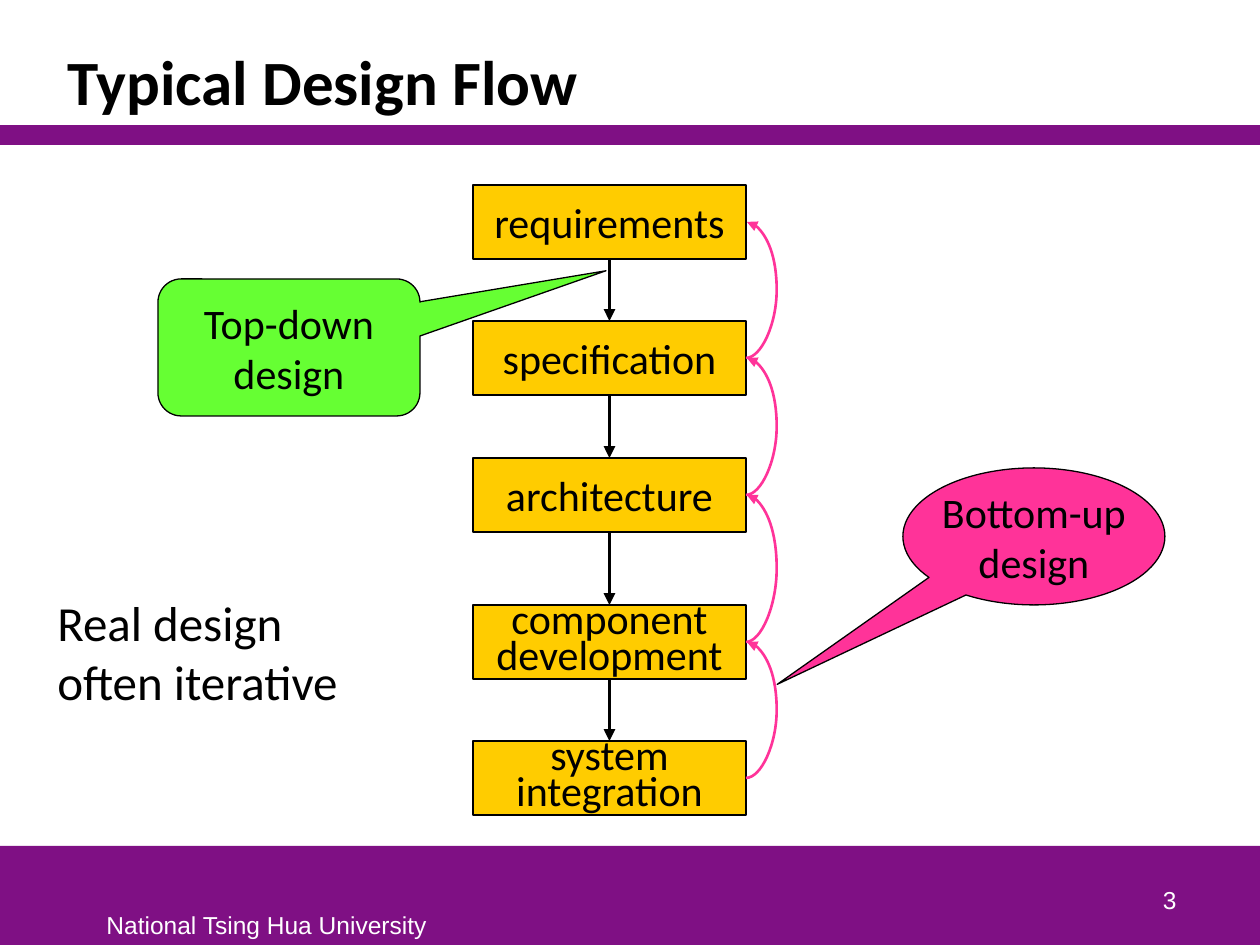
from itertools import pairwise

from lxml.etree import SubElement
from pptx import Presentation
from pptx.dml.color import RGBColor
from pptx.enum.shapes import MSO_CONNECTOR, MSO_SHAPE
from pptx.enum.text import MSO_ANCHOR, PP_ALIGN
from pptx.oxml.ns import qn
from pptx.util import Pt

SCALE = 914400 / 126
PURPLE = RGBColor(0x7F, 0x10, 0x84)
AMBER = RGBColor(0xFF, 0xCC, 0x00)
GREEN = RGBColor(0x66, 0xFF, 0x33)
PINK = RGBColor(0xFF, 0x33, 0x99)
BLACK = RGBColor(0, 0, 0)
WHITE = RGBColor(0xFF, 0xFF, 0xFF)


def px(length):
    """Turn px into EMU."""
    return round(length * SCALE)


def write(shape, lines, size, font="Calibri", color=BLACK, bold=False,
          align=PP_ALIGN.CENTER, anchor=MSO_ANCHOR.MIDDLE, spacing=None, wrap=False):
    """Write one paragraph per line; a tab-free newline breaks within a paragraph."""
    frame = shape.text_frame
    frame.word_wrap = wrap
    frame.vertical_anchor = anchor
    for index, line in enumerate(lines):
        paragraph = frame.add_paragraph() if index else frame.paragraphs[0]
        paragraph.alignment = align
        if spacing:
            paragraph.line_spacing = spacing
        for part, words in enumerate(line.split("\n")):
            if part:
                paragraph.add_line_break()
            run = paragraph.add_run()
            run.text = words
            run.font.size = Pt(size)
            run.font.name = font
            run.font.bold = bold
            run.font.color.rgb = color


def add_label(slide, box, lines, size, **style):
    """Add a left-aligned text box."""
    label = slide.shapes.add_textbox(*map(px, box))
    write(label, lines, size, **{"align": PP_ALIGN.LEFT, "anchor": MSO_ANCHOR.TOP, **style})


def add_block(slide, kind, box, fill, outline=None):
    """Add a filled shape, outlined in black when a width is given."""
    block = slide.shapes.add_shape(kind, *map(px, box))
    block.shadow.inherit = False
    block.fill.solid()
    block.fill.fore_color.rgb = fill
    if outline:
        block.line.color.rgb = BLACK
        block.line.width = Pt(outline)
    else:
        block.line.fill.background()
    return block


def add_arrow(slide, kind, start, end, color, width):
    """Add a connector with a triangular head at its end."""
    arrow = slide.shapes.add_connector(kind, *map(px, (*start, *end)))
    arrow.line.color.rgb = color
    arrow.line.width = Pt(width)
    SubElement(arrow.line._get_or_add_ln(), qn("a:tailEnd"), type="triangle")
    SubElement(arrow._element.spPr, qn("a:effectLst"))
    return arrow


def add_feedback(slide, start, end, bulge):
    """Add a curved arrow that swings out to the right by the bulge."""
    feedback = add_arrow(slide, MSO_CONNECTOR.CURVE, start, end, PINK, 1.5)
    adjustments = feedback._element.spPr.find(qn("a:prstGeom")).get_or_add_avLst()
    ratio = round(bulge / (end[0] - start[0]) * 100000)
    SubElement(adjustments, qn("a:gd"), name="adj1", fmla=f"val {ratio}")


def add_header(slide, box):
    """Place the title above the band at the bottom of the box."""
    left, top, width, height = box
    band = 20
    add_block(slide, MSO_SHAPE.RECTANGLE, (left, top + height - band, width, band), PURPLE)
    add_label(slide, (left + 55, top + 32, width - 130, height - band - 32),
              ["Typical Design Flow"], 36, bold=True, anchor=MSO_ANCHOR.BOTTOM,
              spacing=0.85, wrap=True)


def add_footer(slide, box):
    """Place the university and the slide number on the bottom band."""
    left, top, width, height = box
    add_block(slide, MSO_SHAPE.RECTANGLE, box, PURPLE)
    add_label(slide, (left + 94, top + 58, 348, 42), ["National Tsing Hua University"],
              14, font="Arial", color=WHITE)
    add_label(slide, (left + 927, top + 12, 262, 63), ["3"], 14, font="Arial", color=WHITE,
              align=PP_ALIGN.RIGHT, anchor=MSO_ANCHOR.BOTTOM, wrap=True)


def add_flow(slide, box):
    """Stack the design steps with arrows down and feedback curves up."""
    left, top, width, _ = box
    step_height = 74
    steps = [
        (0, ["requirements"]),
        (136, ["specification"]),
        (273, ["architecture"]),
        (420, ["component", "development"]),
        (556, ["system", "integration"]),
    ]
    blocks = []
    for offset, lines in steps:
        step = add_block(slide, MSO_SHAPE.RECTANGLE,
                         (left, top + offset, width, step_height), AMBER, 1)
        tight = len(lines) > 1
        write(step, lines, 24, spacing=0.7 if tight else None)
        if tight:
            step.text_frame.margin_top = step.text_frame.margin_bottom = px(1)
        blocks.append((step, top + offset))
    right = left + width
    for (upper, upper_top), (lower, lower_top) in pairwise(blocks):
        center = left + width // 2
        descent = add_arrow(slide, MSO_CONNECTOR.STRAIGHT, (center, upper_top + step_height),
                            (center, lower_top), BLACK, 2.25)
        descent.begin_connect(upper, 2)
        descent.end_connect(lower, 0)
        add_feedback(slide, (right, lower_top + step_height // 2),
                     (right + 1, upper_top + step_height // 2), 31)


def add_callout(slide, kind, box, fill, lines, tail):
    """Add a speech callout whose tail is given relative to its size."""
    callout = add_block(slide, kind, box, fill, 0.75)
    for index, value in enumerate(tail):
        callout.adjustments[index] = value
    write(callout, lines, 24)


def main():
    """Build the slide and save it."""
    deck = Presentation()
    deck.slide_width, deck.slide_height = px(1260), px(945)
    slide = deck.slides.add_slide(deck.slide_layouts[6])
    add_footer(slide, (0, 846, 1260, 99))
    add_header(slide, (0, 0, 1260, 145))
    add_flow(slide, (473, 185, 273, 630))
    add_callout(slide, MSO_SHAPE.ROUNDED_RECTANGULAR_CALLOUT, (158, 279, 262, 137), GREEN,
                ["Top-down", "design"], (1.21, -0.56, 0.17))
    add_callout(slide, MSO_SHAPE.OVAL_CALLOUT, (903, 468, 262, 137), PINK,
                ["Bottom-up", "design"], (-0.98, 1.08))
    add_label(slide, (45, 586, 310, 130), ["Real design\noften iterative"], 28)
    deck.save("out.pptx")


if __name__ == "__main__":
    main()
